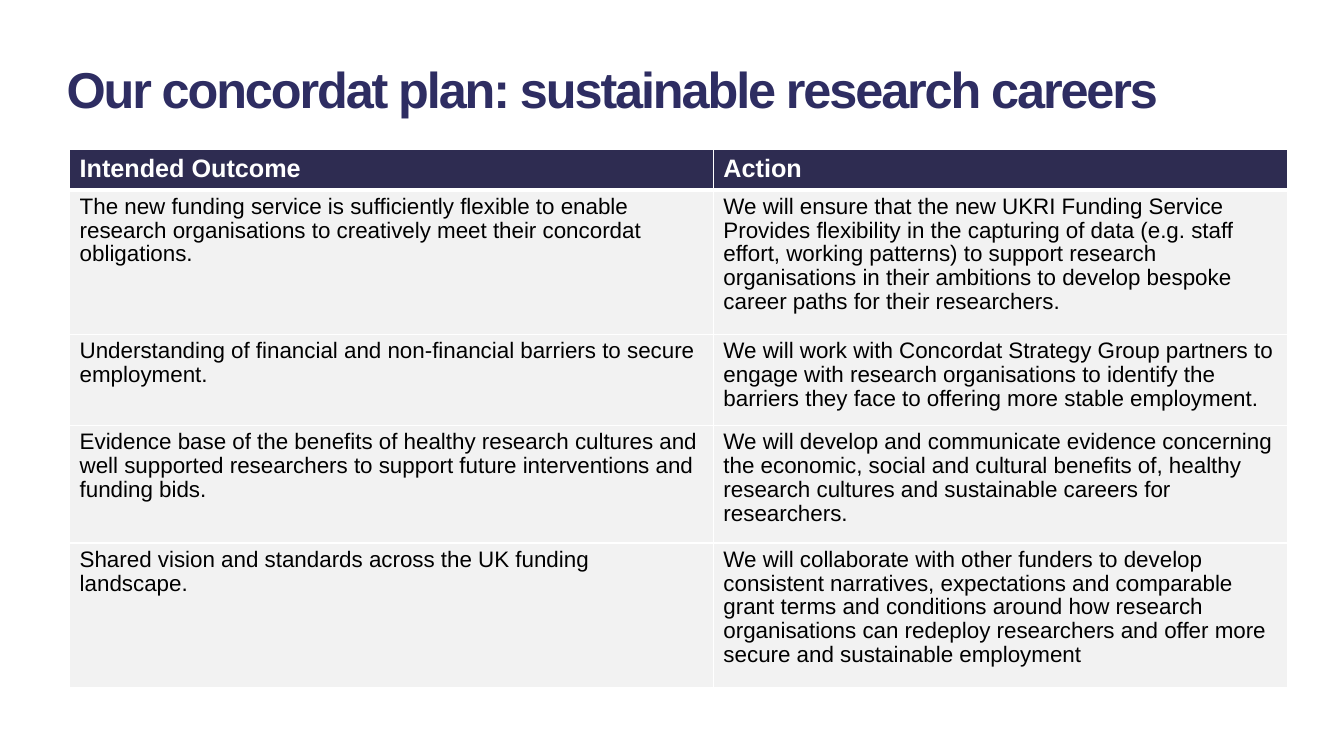
from dataclasses import dataclass

from lxml.etree import SubElement
from pptx import Presentation
from pptx.dml.color import RGBColor
from pptx.enum.text import MSO_ANCHOR as Anchor, MSO_AUTO_SIZE as AutoSize
from pptx.oxml.ns import qn
from pptx.slide import Slide
from pptx.table import _Cell as Cell
from pptx.text.text import _Paragraph as Paragraph
from pptx.util import Emu, Inches, Pt

WIDTH, HEIGHT = Inches(13.33), Inches(7.5)
FONT = "Arial"
TITLE_BLUE = RGBColor(0x2E, 0x2D, 0x62)
HEADER_BLUE = RGBColor(0x2E, 0x2C, 0x51)
PALE_GREY = RGBColor(0xF2, 0xF2, 0xF2)
WHITE = RGBColor(0xFF, 0xFF, 0xFF)
BLACK = RGBColor(0x00, 0x00, 0x00)


@dataclass(frozen=True)
class CellStyle:
    size: int
    bold: bool
    color: RGBColor
    fill: RGBColor
    line_spacing: float
    bottom_border: int


@dataclass(frozen=True)
class PlanRow:
    outcome: str
    action: str
    height: float
    style: CellStyle


HEADER = CellStyle(18, True, WHITE, HEADER_BLUE, 1.0, 3)
BODY = CellStyle(16, False, BLACK, PALE_GREY, 0.96, 1)

COLUMN_SHARES = (47.9, 42.74)
PLAN = (
    PlanRow("Intended Outcome", "Action", 5.4, HEADER),
    PlanRow(
        "The new funding service is sufficiently flexible to enable research organisations "
        "to creatively meet their concordat obligations.",
        "We will ensure that the new UKRI Funding Service Provides flexibility in the capturing "
        "of data (e.g. staff effort, working patterns) to support research organisations in their "
        "ambitions to develop bespoke career paths for their researchers.",
        19.1, BODY),
    PlanRow(
        "Understanding of financial and non-financial barriers to secure employment.",
        "We will work with Concordat Strategy Group partners to engage with research organisations "
        "to identify the barriers they face to offering more stable employment.",
        12.1, BODY),
    PlanRow(
        "Evidence base of the benefits of healthy research cultures and well supported researchers "
        "to support future interventions and funding bids.",
        "We will develop and communicate evidence concerning the economic, social and cultural "
        "benefits of, healthy research cultures and sustainable careers for researchers.",
        15.5, BODY),
    PlanRow(
        "Shared vision and standards across the UK funding landscape.",
        "We will collaborate with other funders to develop consistent narratives, expectations "
        "and comparable grant terms and conditions around how research organisations can redeploy "
        "researchers and offer more secure and sustainable employment",
        19.1, BODY),
)


def across(percent: float) -> Emu:
    return Emu(round(WIDTH * percent / 100))


def down(percent: float) -> Emu:
    return Emu(round(HEIGHT * percent / 100))


def format_text(para: Paragraph, size: int, bold: bool, color: RGBColor) -> None:
    for span in para.runs:
        span.font.name = FONT
        span.font.size = Pt(size)
        span.font.bold = bold
        span.font.color.rgb = color


def add_title(page: Slide, text: str) -> None:
    title = page.shapes.title
    title.left, title.top = across(4.2), down(7.07)
    title.width, title.height = across(91.52), down(9.47)
    frame = title.text_frame
    frame.text = text
    frame.word_wrap = True
    frame.auto_size = AutoSize.SHAPE_TO_FIT_TEXT
    frame.vertical_anchor = Anchor.TOP
    para = frame.paragraphs[0]
    para.alignment = 1
    para.line_spacing = 1.0
    para.space_before = Pt(0)
    format_text(para, 36, True, TITLE_BLUE)
    para.runs[0].font._element.set("spc", "-150")


def add_borders(cell: Cell, bottom: int) -> None:
    properties = cell._tc.get_or_add_tcPr()
    for side, points in (("L", 1), ("R", 1), ("T", 1), ("B", bottom)):
        line = SubElement(properties, qn(f"a:ln{side}"), w=str(Pt(points)))
        fill = SubElement(line, qn("a:solidFill"))
        SubElement(fill, qn("a:srgbClr"), val=str(WHITE))


def fill_cell(cell: Cell, text: str, style: CellStyle) -> None:
    add_borders(cell, style.bottom_border)
    cell.fill.solid()
    cell.fill.fore_color.rgb = style.fill
    cell.text_frame.text = text
    para = cell.text_frame.paragraphs[0]
    para.line_spacing = style.line_spacing
    format_text(para, style.size, style.bold, style.color)


def add_plan_table(page: Slide) -> None:
    table = page.shapes.add_table(
        len(PLAN), len(COLUMN_SHARES), across(5.18), down(19.73),
        across(sum(COLUMN_SHARES)), down(sum(row.height for row in PLAN))).table
    for column, share in zip(table.columns, COLUMN_SHARES):
        column.width = across(share)
    for index, row in enumerate(PLAN):
        table.rows[index].height = down(row.height)
        for cell, text in zip(table.rows[index].cells, (row.outcome, row.action)):
            fill_cell(cell, text, row.style)


def main() -> None:
    deck = Presentation()
    deck.slide_width, deck.slide_height = WIDTH, HEIGHT
    page = deck.slides.add_slide(deck.slide_layouts[5])
    add_title(page, "Our concordat plan: sustainable research careers")
    add_plan_table(page)
    deck.save("out.pptx")


if __name__ == "__main__":
    main()
